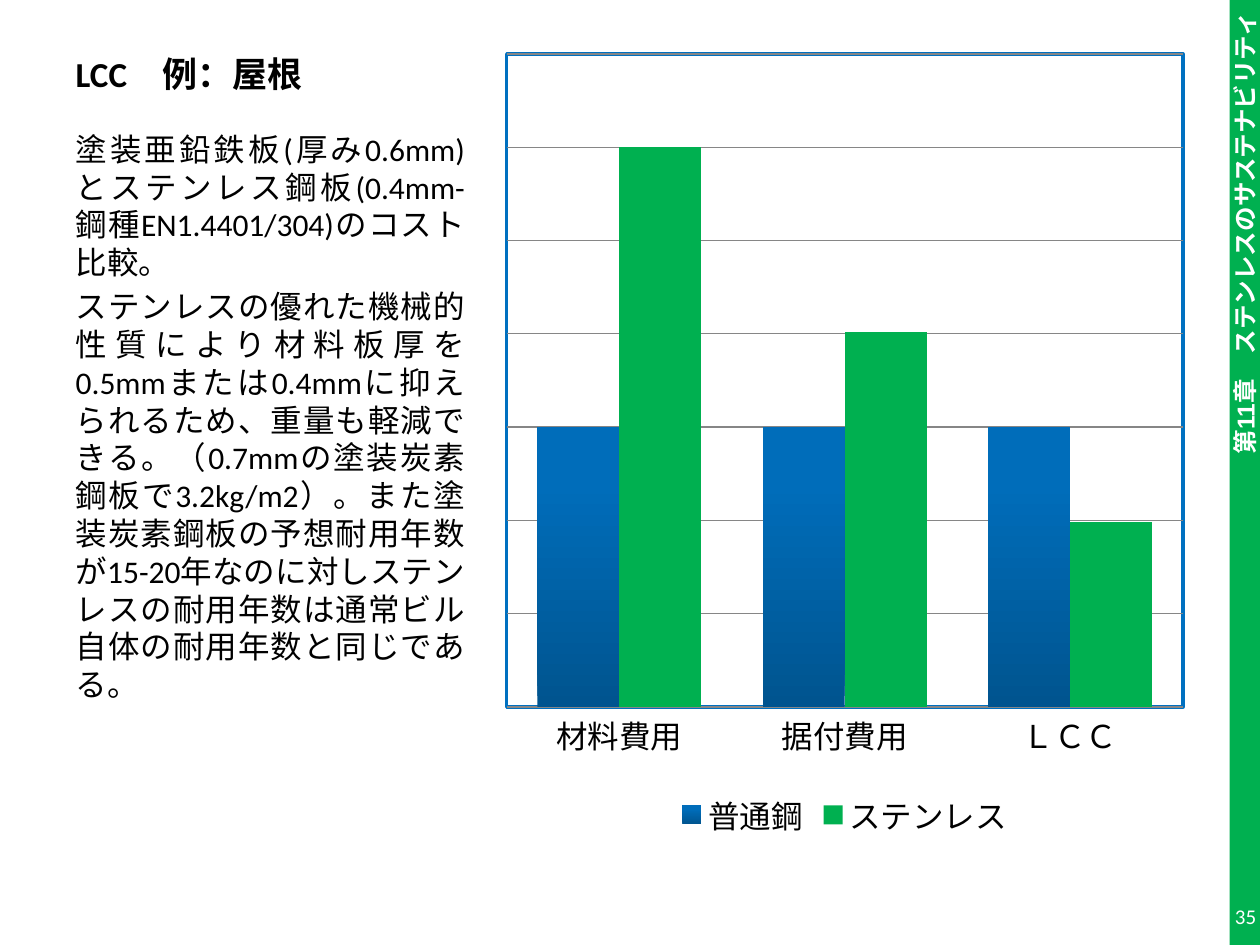
from lxml.etree import SubElement
from pptx import Presentation
from pptx.chart.data import CategoryChartData
from pptx.dml.color import RGBColor
from pptx.enum.chart import XL_CHART_TYPE as ChartType, XL_LEGEND_POSITION as LegendPosition
from pptx.enum.chart import XL_TICK_LABEL_POSITION as LabelPosition, XL_TICK_MARK as TickMark
from pptx.enum.shapes import MSO_SHAPE as Shape
from pptx.enum.text import MSO_ANCHOR as Anchor, MSO_AUTO_SIZE as AutoSize, PP_ALIGN as Align
from pptx.oxml import parse_xml
from pptx.oxml.ns import nsdecls, qn
from pptx.util import Inches, Pt

GREEN = RGBColor(0x00, 0xB0, 0x50)
BLUE = RGBColor(0x00, 0x70, 0xC0)
DARK_BLUE = RGBColor(0x00, 0x54, 0x8F)
MID_BLUE = RGBColor(0x00, 0x6D, 0xBA)
GRAY = RGBColor(0x86, 0x86, 0x86)
WHITE = RGBColor(0xFF, 0xFF, 0xFF)
BLACK = RGBColor(0x00, 0x00, 0x00)

CHAPTER = "第11章\u3000ステンレスのサステナビリティ"
TITLE = "LCC\u3000例：屋根"
BODY = [
    "塗装亜鉛鉄板(厚み0.6mm)とステンレス鋼板(0.4mm-鋼種EN1.4401/304)のコスト比較。",
    "ステンレスの優れた機械的性質により材料板厚を0.5mmまたは0.4mmに抑えられるため、"
    "重量も軽減できる。（0.7mmの塗装炭素鋼板で3.2kg/m2）。また塗装炭素鋼板の予想耐用年数が"
    "15-20年なのに対しステンレスの耐用年数は通常ビル自体の耐用年数と同じである。",
]
CATEGORIES = ["材料費用", "据付費用", "ＬＣＣ"]
COSTS = {"普通鋼": (50, 50, 50), "ステンレス": (100, 67, 33)}
GRID_STEP = 16.67


def place(shape, box):
    """Move a shape to a box of left, top, width and height in inches."""
    shape.left, shape.top, shape.width, shape.height = map(Inches, box)


def style(font, size, color, name="Calibri", bold=False):
    """Set size, colour, typeface and weight of a font."""
    font.size, font.name, font.bold = Pt(size), name, bold
    font.color.rgb = color


def write(shape, lines, align, anchor, size, color, name="Calibri", bold=False):
    """Fill a shape with one formatted paragraph per line."""
    frame = shape.text_frame
    frame.text = "\n".join(lines)
    frame.word_wrap, frame.auto_size = True, AutoSize.NONE
    frame.vertical_anchor = anchor
    for para in frame.paragraphs:
        para.alignment = align
        for span in para.runs:
            style(span.font, size, color, name, bold)


def add_sidebar(page, box):
    """Add the green chapter strip with upward text."""
    strip = page.shapes.add_shape(Shape.RECTANGLE, *map(Inches, box))
    strip.shadow.inherit = False
    strip.fill.solid()
    strip.fill.fore_color.rgb = GREEN
    strip.line.fill.background()
    write(strip, [CHAPTER], Align.RIGHT, Anchor.MIDDLE, 14, WHITE, "Arial", True)
    strip.text_frame._txBody.bodyPr.set("vert", "vert270")


def add_title(page, box):
    """Fill and place the title."""
    title = page.shapes.title
    place(title, box)
    write(title, [TITLE], Align.LEFT, Anchor.BOTTOM, 20, BLACK, bold=True)


def add_body(page, box):
    """Fill and place the justified explanation without bullets."""
    body = page.placeholders[1]
    place(body, box)
    write(body, BODY, Align.JUSTIFY, Anchor.TOP, 18, BLACK)
    for para in body.text_frame.paragraphs:
        para.space_before = Pt(3.6)
        props = para._p.get_or_add_pPr()
        props.set("marL", "0")
        props.set("indent", "0")
        SubElement(props, qn("a:buNone"))


def format_plot_area(chart):
    """Fix the inner plot box and give it a white fill and blue frame."""
    area = chart._chartSpace.chart.plotArea
    for old in area.findall(qn("c:layout")):
        area.remove(old)
    sizes = {"x": 0.02, "y": 0.02, "w": 0.96, "h": 0.81}
    values = "".join(f'<c:{key} val="{value}"/>' for key, value in sizes.items())
    area.insert(0, parse_xml(
        f'<c:layout {nsdecls("c")}><c:manualLayout><c:layoutTarget val="inner"/>'
        f'<c:xMode val="edge"/><c:yMode val="edge"/>{values}</c:manualLayout></c:layout>'))
    area.append(parse_xml(
        f'<c:spPr {nsdecls("c", "a")}><a:solidFill><a:srgbClr val="{WHITE}"/></a:solidFill>'
        f'<a:ln w="{Pt(2)}"><a:solidFill><a:srgbClr val="{BLUE}"/></a:solidFill></a:ln></c:spPr>'))


def add_cost_chart(page, box):
    """Add the column chart comparing the two steels."""
    data = CategoryChartData()
    data.categories = CATEGORIES
    for name, values in COSTS.items():
        data.add_series(name, values)
    chart = page.shapes.add_chart(ChartType.COLUMN_CLUSTERED, *map(Inches, box), data).chart
    style(chart.font, 18, BLACK)
    chart.has_title = False
    chart.has_legend = True
    chart.legend.position = LegendPosition.BOTTOM
    chart.legend.include_in_layout = False

    plot = chart.plots[0]
    plot.gap_width, plot.overlap, plot.vary_by_categories = 75, 0, False
    plain, stainless = plot.series
    plain.format.fill.gradient()
    plain.format.fill.gradient_angle = 90
    for stop, color, position in zip(
            plain.format.fill.gradient_stops, (DARK_BLUE, MID_BLUE), (0, 0.8)):
        stop.color.rgb, stop.position = color, position
    stainless.format.fill.solid()
    stainless.format.fill.fore_color.rgb = GREEN

    costs = chart.value_axis
    costs.minimum_scale, costs.maximum_scale = 0, 7 * GRID_STEP
    costs.major_unit = GRID_STEP
    costs.has_major_gridlines = True
    costs.major_gridlines.format.line.color.rgb = GRAY
    costs.major_gridlines.format.line.width = Pt(0.75)
    costs.tick_label_position = LabelPosition.NONE
    costs.visible = False
    chart.category_axis.major_tick_mark = TickMark.NONE
    chart.category_axis.format.line.fill.background()
    format_plot_area(chart)


def add_page_number(page, box):
    """Add the page number at the foot of the strip."""
    number = page.shapes.add_textbox(*map(Inches, box))
    write(number, ["35"], Align.RIGHT, Anchor.MIDDLE, 12, WHITE)
    frame = number.text_frame
    frame.margin_left = frame.margin_right = frame.margin_top = frame.margin_bottom = 0


def main():
    """Build the slide and save it."""
    deck = Presentation()
    deck.slide_width, deck.slide_height = Inches(10), Inches(7.5)
    page = deck.slides.add_slide(deck.slide_layouts[1])
    add_sidebar(page, (9.76, 0, 0.24, 7.5))
    add_title(page, (0.5, 0.3, 3.29, 0.5))
    add_cost_chart(page, (3.91, 0.3, 5.59, 6.4))
    add_body(page, (0.5, 0.98, 3.29, 5.13))
    add_page_number(page, (9.54, 7.07, 0.43, 0.4))
    deck.save("out.pptx")


if __name__ == "__main__":
    main()
